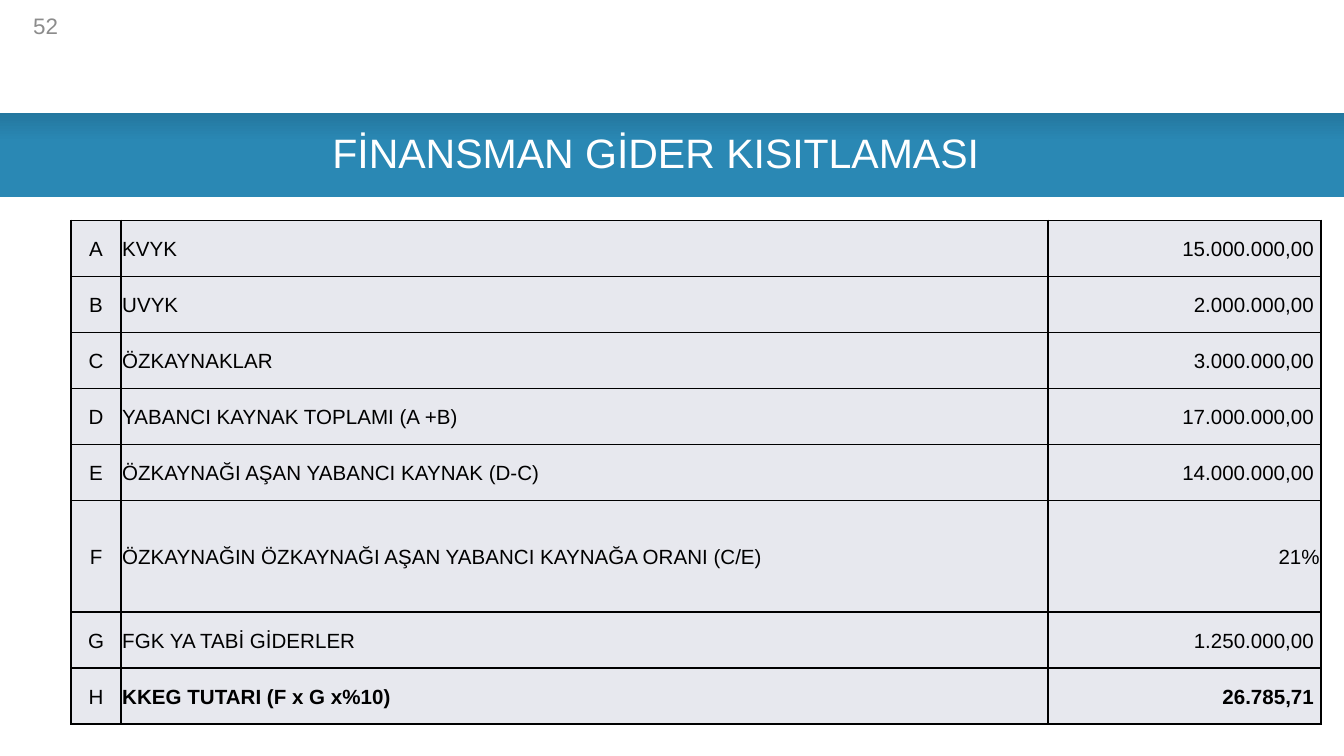
from dataclasses import dataclass

from lxml import etree
from pptx import Presentation
from pptx.dml.color import RGBColor
from pptx.enum.shapes import MSO_SHAPE
from pptx.enum.text import MSO_ANCHOR, PP_ALIGN
from pptx.oxml.ns import qn
from pptx.util import Emu, Pt

RECTANGLE = MSO_SHAPE.RECTANGLE
MIDDLE = MSO_ANCHOR.MIDDLE
LEFT, CENTER, RIGHT = PP_ALIGN.LEFT, PP_ALIGN.CENTER, PP_ALIGN.RIGHT
TITLE_ONLY = 5
EMU_PER_PX = 9144  # 100 px to the inch
SLIDE_WIDTH = 1000


@dataclass(frozen=True)
class Theme:
    font: str = "Arial"
    title_size: int = 22
    number_size: int = 12
    cell_size: int = 11
    border_width: int = 1
    band_top: str = "24779F"
    band_bottom: str = "2A88B4"
    title: str = "FFFFFF"
    number: str = "8C8C8C"
    cell_text: str = "000000"
    cell_fill: str = "E7E8EE"
    border: str = "000000"


THEME = Theme()

# Letter, label, amount, height in row units, bold
ROWS = [
    ("A", "KVYK", "15.000.000,00 ", 1, False),
    ("B", "UVYK", "2.000.000,00 ", 1, False),
    ("C", "ÖZKAYNAKLAR", "3.000.000,00 ", 1, False),
    ("D", "YABANCI KAYNAK TOPLAMI (A +B)", "17.000.000,00 ", 1, False),
    ("E", "ÖZKAYNAĞI AŞAN YABANCI KAYNAK (D-C)", "14.000.000,00 ", 1, False),
    ("F", "ÖZKAYNAĞIN ÖZKAYNAĞI AŞAN YABANCI KAYNAĞA ORANI (C/E)", "21%", 2, False),
    ("G", "FGK YA TABİ GİDERLER", "1.250.000,00 ", 1, False),
    ("H", "KKEG TUTARI (F x G x%10)", "26.785,71 ", 1, True),
]
COLUMN_WIDTHS = (37, 690, 203)
COLUMN_ALIGNMENTS = (CENTER, LEFT, RIGHT)


def px(length):
    return Emu(length * EMU_PER_PX)


def write_text(text_frame, text, *, size, color, align=LEFT, bold=False):
    paragraph = text_frame.paragraphs[0]
    paragraph.alignment = align
    run = paragraph.add_run()
    run.text = text
    run.font.name = THEME.font
    run.font.size = Pt(size)
    run.font.bold = bold
    run.font.color.rgb = RGBColor.from_string(color)


def add_page_number(slide, left, top, width, height, number):
    text_box = slide.shapes.add_textbox(px(left), px(top), px(width), px(height))
    text_frame = text_box.text_frame
    text_frame.word_wrap = True
    text_frame.vertical_anchor = MIDDLE
    write_text(text_frame, number, size=THEME.number_size, color=THEME.number, align=RIGHT)


def add_title_band(slide, left, top, width, height, text):
    # Gradient band, darker along its top edge
    band = slide.shapes.add_shape(RECTANGLE, px(left), px(top), px(width), px(height))
    band.shadow.inherit = False
    band.line.fill.background()
    band.fill.gradient()
    band.fill.gradient_angle = 270
    stops = ((0, THEME.band_top), (0.34, THEME.band_bottom))
    for stop, (position, color) in zip(band.fill.gradient_stops, stops):
        stop.position = position
        stop.color.rgb = RGBColor.from_string(color)

    # Title, brought in front of the band
    title = slide.shapes.title
    title.left, title.top = px(left + 38), px(top + 3)
    title.width, title.height = px(width - 100), px(height - 10)
    title.text_frame.vertical_anchor = MIDDLE
    write_text(title.text_frame, text, size=THEME.title_size, color=THEME.title, align=CENTER)
    band.element.addnext(title.element)


def add_borders(cell):
    properties = cell._tc.get_or_add_tcPr()
    for side in ("a:lnL", "a:lnR", "a:lnT", "a:lnB"):
        line = etree.SubElement(properties, qn(side), w=str(Pt(THEME.border_width)))
        fill = etree.SubElement(line, qn("a:solidFill"))
        etree.SubElement(fill, qn("a:srgbClr"), val=THEME.border)


def format_cell(cell, text, align, bold):
    add_borders(cell)
    cell.fill.solid()
    cell.fill.fore_color.rgb = RGBColor.from_string(THEME.cell_fill)
    cell.vertical_anchor = MIDDLE
    cell.margin_left = cell.margin_top = cell.margin_right = px(1)
    cell.margin_bottom = 0
    write_text(cell.text_frame, text, size=THEME.cell_size, color=THEME.cell_text,
               align=align, bold=bold)


def add_expense_table(slide, left, top, width, height):
    frame = slide.shapes.add_table(len(ROWS), len(COLUMN_WIDTHS),
                                   px(left), px(top), px(width), px(height))
    table = frame.table
    table.first_row = table.horz_banding = False
    for column, column_width in zip(table.columns, COLUMN_WIDTHS):
        column.width = px(column_width)
    row_unit = px(height) // sum(units for *_, units, _ in ROWS)
    for row, (letter, label, amount, units, bold) in zip(table.rows, ROWS):
        row.height = Emu(row_unit * units)
        texts = (letter, label, amount)
        weights = (False, bold, bold)
        for cell, text, align, weight in zip(row.cells, texts, COLUMN_ALIGNMENTS, weights):
            format_cell(cell, text, align, weight)


def main():
    presentation = Presentation()
    # Widescreen, 16:9
    presentation.slide_width = px(SLIDE_WIDTH)
    presentation.slide_height = Emu(px(SLIDE_WIDTH) * 9 // 16)
    slide = presentation.slides.add_slide(presentation.slide_layouts[TITLE_ONLY])
    add_title_band(slide, 0, 84, SLIDE_WIDTH, 63, "FİNANSMAN GİDER KISITLAMASI")
    add_expense_table(slide, 53, 164, sum(COLUMN_WIDTHS), 375)
    add_page_number(slide, 4, 4, 49, 30, "52")
    presentation.save("out.pptx")


if __name__ == "__main__":
    main()
